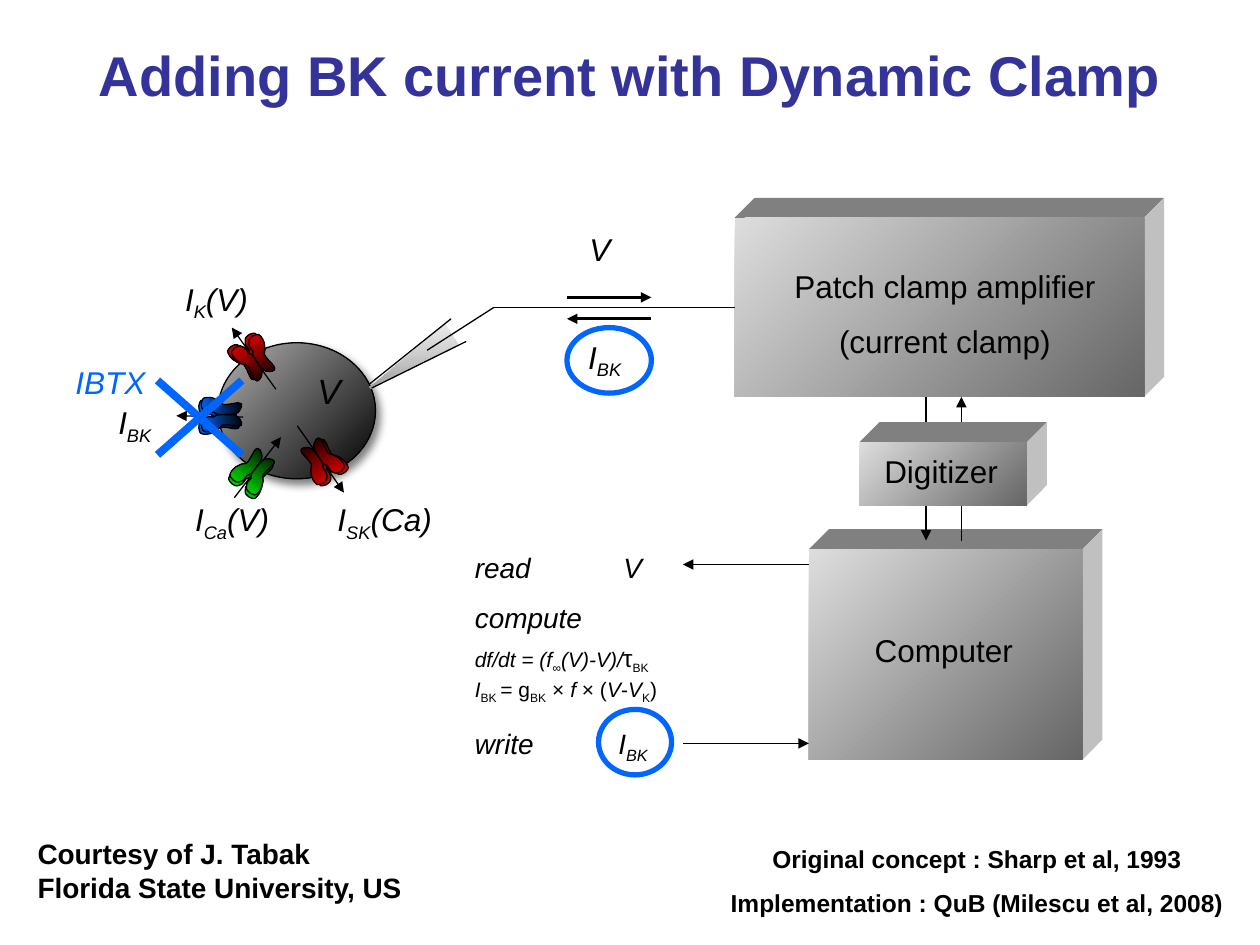
from dataclasses import dataclass
from math import cos, pi, sin
from typing import Any, NamedTuple, Optional, Sequence

from lxml.etree import SubElement
from pptx import Presentation
from pptx.dml.color import RGBColor
from pptx.enum.shapes import MSO_CONNECTOR, MSO_SHAPE
from pptx.enum.text import MSO_ANCHOR, MSO_AUTO_SIZE, PP_ALIGN
from pptx.oxml.ns import qn
from pptx.util import Cm, Pt


@dataclass(frozen=True)
class Theme:
    font: str = "Arial"
    ink: str = "000000"
    title: str = "333399"
    accent: str = "0066FF"
    box_top: str = "808080"
    box_side: str = "C0C0C0"
    box_front: tuple = ("DDDDDD", "666666")
    cell: tuple = ("B2B2B2", "000000")
    glass: tuple = ("DDDDDD", "9E9E9E")
    title_size: int = 32
    voltage_size: int = 20
    label_size: int = 18
    code_size: int = 16
    credit_size: int = 14
    formula_size: int = 12


THEME = Theme()


class Span(NamedTuple):
    text: str
    sub: bool = False
    italic: bool = True
    size: int = 0


class Para(NamedTuple):
    spans: Sequence[Span]
    before: float = 0
    tab: float = 0
    size: int = 0


class Label(NamedTuple):
    frame: tuple
    paras: Sequence[Para]
    size: int = THEME.label_size
    color: str = THEME.ink
    bold: bool = False
    wrap: bool = False
    align: Any = PP_ALIGN.LEFT


class Arrow(NamedTuple):
    start: tuple
    end: tuple
    width: float = 0.75
    head: bool = True
    color: str = THEME.ink


class Channel(NamedTuple):
    center: tuple
    turn: float
    front: tuple  # shift of the front pair of lobes
    color: str


# The page is a 10 by 7.5 grid; one step is 2.54 cm
def grid(steps: float) -> int:
    return Cm(2.54 * steps)


def place(*steps: float) -> list:
    return [grid(step) for step in steps]


def shade(shape: Any, colors: Sequence[str], angle: float) -> None:
    shape.fill.gradient()
    shape.fill.gradient_angle = (360 - angle) % 360
    for stop, position, color in zip(shape.fill.gradient_stops, (0, 1), colors):
        stop.position, stop.color.rgb = position, RGBColor.from_string(color)


def outline(shape: Any, color: str, width: float) -> None:
    shape.line.color.rgb = RGBColor.from_string(color)
    shape.line.width = Pt(width)


def polygon(page: Any, points: Sequence[tuple]) -> Any:
    corners = [place(*point) for point in points]
    builder = page.shapes.build_freeform(*corners[0], scale=1.0)
    builder.add_line_segments(corners[1:], close=True)
    shape = builder.convert_to_shape()
    shape.shadow.inherit = False
    shape.line.fill.background()
    return shape


def draw_arrow(page: Any, arrow: Arrow) -> Any:
    line = page.shapes.add_connector(MSO_CONNECTOR.STRAIGHT, *place(*arrow.start, *arrow.end))
    outline(line, arrow.color, arrow.width)
    if arrow.head:
        SubElement(line.line._get_or_add_ln(), qn("a:tailEnd"), type="triangle")
    SubElement(line._element.spPr, qn("a:effectLst"))
    return line


def draw_ellipse(page: Any, *frame: float) -> Any:
    shape = page.shapes.add_shape(MSO_SHAPE.OVAL, *place(*frame))
    shape.shadow.inherit = False
    return shape


def draw_ring(page: Any, *frame: float) -> None:
    ring = draw_ellipse(page, *frame)
    ring.fill.background()
    outline(ring, THEME.accent, 3)


def draw_box(page: Any, x: float, y: float, width: float, height: float) -> Any:
    """A block with a shaded front, a top face and a right face."""
    depth, right, bottom = 0.16, x + width, y + height
    top = [(x, y), (x + depth, y - depth), (right + depth, y - depth), (right, y)]
    side = [(right, y), (right + depth, y - depth), (right + depth, bottom - depth), (right, bottom)]
    for points, color in ((top, THEME.box_top), (side, THEME.box_side)):
        face = polygon(page, points)
        face.fill.solid()
        face.fill.fore_color.rgb = RGBColor.from_string(color)
    front = page.shapes.add_shape(MSO_SHAPE.RECTANGLE, *place(x, y, width, height))
    front.shadow.inherit = False
    front.line.fill.background()
    shade(front, THEME.box_front, 45)
    return front


def write(box: Any, label: Label) -> None:
    frame = box.text_frame
    frame.word_wrap = label.wrap
    for index, item in enumerate(label.paras):
        para = frame.paragraphs[0] if index == 0 else frame.add_paragraph()
        para.alignment = label.align
        if item.before:
            para.space_before = Pt(item.before)
        if item.tab:
            tabs = SubElement(para._p.get_or_add_pPr(), qn("a:tabLst"))
            SubElement(tabs, qn("a:tab"), pos=str(grid(item.tab)), algn="l")
        for part in item.spans:
            span = para.add_run()
            span.text = part.text
            size = Pt(part.size or item.size or label.size)
            formats = {"name": THEME.font, "size": size, "bold": label.bold, "italic": part.italic}
            for name, value in formats.items():
                setattr(span.font, name, value)
            span.font.color.rgb = RGBColor.from_string(label.color)
            if part.sub:
                span._r.get_or_add_rPr().set("baseline", "-25000")


def draw_label(page: Any, label: Label) -> None:
    box = page.shapes.add_textbox(*place(*label.frame))
    write(box, label)
    box.text_frame.auto_size = MSO_AUTO_SIZE.SHAPE_TO_FIT_TEXT


def plain(text: str, before: float = 0) -> Para:
    return Para([Span(text, italic=False)], before)


def current(sub: str, tail: Optional[str] = None) -> list:
    return [Para([Span("I"), Span(sub, True)] + ([Span(tail)] if tail else []))]


# Left lobe of a channel: start, then cubic segments, in hundredths of a step
LOBE = [(4, -12), (6, -10), (5, -7), (5, -5), (6, -3), (7, -3), (7, 0), (7, 3), (7, 10), (6, 13),
        (3, 18), (-2, 18), (-2, 16), (-3, 14), (-1, 9), (-1, 5), (0, 1), (-4, 1), (-5, -3),
        (-7, -6), (-7, -11), (-6, -13), (-6, -14), (2, -17), (4, -12)]


def draw_lobe(page: Any, mirror: int) -> Any:
    lobe = polygon(page, [(1 + mirror * x / 100, 1 + y / 100) for x, y in LOBE])
    # Every three straight segments become one cubic curve
    segments = list(lobe._element.spPr.iter(qn("a:lnTo")))
    for first in range(0, len(segments), 3):
        curve, *others = segments[first:first + 3]
        cubic = curve.makeelement(qn("a:cubicBezTo"))
        curve.addprevious(cubic)
        for segment in (curve, *others):
            cubic.append(segment[0])
            segment.getparent().remove(segment)
    return lobe


def draw_channel(page: Any, channel: Channel) -> None:
    angle = channel.turn * pi / 180
    for shift in ((0, 0), channel.front):
        for mirror in (1, -1):
            lobe = draw_lobe(page, mirror)
            x = channel.center[0] + shift[0] - mirror * 0.07 * cos(angle)
            y = channel.center[1] + shift[1] - mirror * 0.07 * sin(angle)
            lobe.left, lobe.top = grid(x) - lobe.width // 2, grid(y) - lobe.height // 2
            lobe.rotation = channel.turn
            shade(lobe, (channel.color, THEME.ink), 90)
            outline(lobe, THEME.ink, 0.75)


CHANNELS = [Channel((2, 3.77), 217.8, (0.01, -0.03), "00FF00"),
            Channel((1.99, 2.83), 326.6, (0.03, 0.01), "FF0000"),
            Channel((1.73, 3.31), 270, (0.02, -0.02), THEME.accent),
            Channel((2.58, 3.67), 146.6, (-0.03, -0.01), "FF0000")]
ION_ARROWS = [Arrow((1.86, 3.95), (2.23, 3.47)), Arrow((1.93, 3.31), (1.4, 3.3)),
              Arrow((2.19, 3.09), (1.84, 2.6)), Arrow((2.36, 3.38), (2.73, 3.91))]
SIGNALS = [Arrow((4.5, 2.36), (5.17, 2.36), 1.5), Arrow((5.17, 2.53), (4.5, 2.53), 1.5),
           Arrow((6.42, 4.48), (5.42, 4.48)), Arrow((5.42, 5.9), (6.42, 5.9))]
DIGITAL = [Arrow((7.63, 4.29), (7.63, 3.15)), Arrow((7.35, 3.15), (7.35, 4.29))]
PIPETTE = [Arrow(start, end, head=False) for start, end in (
    ((3.39, 2.78), (3.92, 2.44)), ((2.93, 3.05), (3.58, 2.53)), ((2.95, 3.08), (3.7, 2.71)))]
CROSS = [Arrow((1.25, y), (1.92, 6.63 - y), 4.5, False, THEME.accent) for y in (3.02, 3.61)]

RATE = [Span("df/dt = (f"), Span("∞", True), Span("(V)-V)/"),
        Span("τ", italic=False, size=THEME.credit_size), Span("BK", True, False)]
BK_FORMULA = [Span("I"), Span("BK ", True, False), Span("= g", italic=False), Span("BK", True, False),
              Span(" × ", italic=False), Span("f "), Span("× (", italic=False), Span("V"),
              Span("-", italic=False), Span("V"), Span("K", True, False), Span(")", italic=False)]
CODE, SMALL = THEME.code_size, THEME.formula_size
LABELS = [
    Label((1.37, 2.17, 0.72, 0.4), current("K", "(V)")),
    Label((1.45, 3.92, 0.82, 0.4), current("Ca", "(V)")),
    Label((2.58, 3.92, 0.98, 0.4), current("SK", "(Ca)")),
    Label((0.84, 3.15, 0.49, 0.4), current("BK")),
    Label((4.57, 2.63, 0.49, 0.4), current("BK"), wrap=True),
    Label((2.42, 2.88, 0.42, 0.43), [Para([Span("V")])], THEME.voltage_size, wrap=True),
    Label((4.58, 1.78, 0.37, 0.4), [Para([Span("V")])]),
    Label((0.5, 2.83, 0.77, 0.4), [Para([Span("IBTX")])], color=THEME.accent),
    Label((6, 2.07, 3, 0.85), [plain("Patch clamp amplifier"), plain("(current clamp)", 10)],
          wrap=True, align=PP_ALIGN.CENTER),
    Label((6.84, 4.96, 1.3, 0.4), [plain("Computer")], align=PP_ALIGN.CENTER),
    Label((6.92, 3.54, 1.1, 0.4), [plain("Digitizer")]),
    Label((3.67, 4.32, 1.67, 0.37), [Para([Span("read\tV")], tab=1.18)], CODE, wrap=True),
    Label((3.67, 4.72, 1.92, 0.67), [Para([Span("compute")]), Para(RATE, 5, size=SMALL)], CODE, wrap=True),
    Label((3.67, 5.32, 2.58, 0.3), [Para(BK_FORMULA)], SMALL, wrap=True, align=PP_ALIGN.JUSTIFY),
    Label((3.67, 5.72, 1.75, 0.37), [Para([Span("write\tI"), Span("BK", True)], tab=1.14)], CODE, wrap=True),
    Label((5.67, 6.65, 4.17, 0.69), [plain("Original concept : Sharp et al, 1993"),
          plain("Implementation : QuB (Milescu et al, 2008)", 8)],
          THEME.credit_size, bold=True, wrap=True, align=PP_ALIGN.CENTER),
    Label((0.2, 6.59, 4.17, 0.64), [plain("Courtesy of J. Tabak"), plain("Florida State University, US")],
          CODE, bold=True, wrap=True)]


def draw_cell(page: Any) -> None:
    cell = draw_ellipse(page, 1.73, 2.72, 1.25, 1.08)
    shade(cell, THEME.cell, 45)
    outline(cell, THEME.ink, 0.75)
    effects = cell._element.spPr.find(qn("a:effectLst"))
    shadow = SubElement(effects, qn("a:outerShdw"), blurRad=str(Pt(5)), dist=str(Pt(3.7)),
                        dir=str(55 * 60000), algn="ctr", rotWithShape="0")
    color = SubElement(shadow, qn("a:srgbClr"), val=THEME.ink)
    SubElement(color, qn("a:alpha"), val="50000")


def main() -> None:
    deck = Presentation()
    deck.slide_width, deck.slide_height = place(10, 7.5)
    page = deck.slides.add_slide(deck.slide_layouts[5])

    # Title
    title = page.shapes.title
    title.left, title.top, title.width, title.height = place(0.5, 0.17, 9, 0.83)
    title.text_frame.vertical_anchor = MSO_ANCHOR.MIDDLE
    write(title, Label((), [plain("Adding BK current with Dynamic Clamp")], THEME.title_size,
                       THEME.title, True, True, PP_ALIGN.CENTER))

    # Cell with its ion channels
    draw_cell(page)
    for arrow in ION_ARROWS:
        draw_arrow(page, arrow)
    for channel in CHANNELS:
        draw_channel(page, channel)

    # Instruments
    amplifier = draw_box(page, 5.83, 1.73, 3.25, 1.42)
    draw_box(page, 6.42, 4.36, 2.17, 1.67)
    for arrow in DIGITAL:
        draw_arrow(page, arrow)
    draw_box(page, 6.82, 3.51, 1.33, 0.5)

    # Pipette and its wire to the amplifier
    glass = polygon(page, [(2.93, 3.06), (2.94, 3.08), (3.64, 2.74), (3.53, 2.57)])
    shade(glass, THEME.glass, 90)
    SubElement(next(glass._element.spPr.iter(qn("a:srgbClr"))), qn("a:alpha"), val="60000")
    wire = draw_arrow(page, Arrow((3.92, 2.44), (5.83, 2.44), head=False))
    wire.end_connect(amplifier, 1)

    # Signals, blocked channel, labels and highlighted currents
    for arrow in PIPETTE + SIGNALS + CROSS:
        draw_arrow(page, arrow)
    for label in LABELS:
        draw_label(page, label)
    draw_ring(page, 4.5, 2.6, 0.67, 0.52)
    draw_ring(page, 4.75, 5.63, 0.58, 0.52)

    deck.save("out.pptx")


if __name__ == "__main__":
    main()
